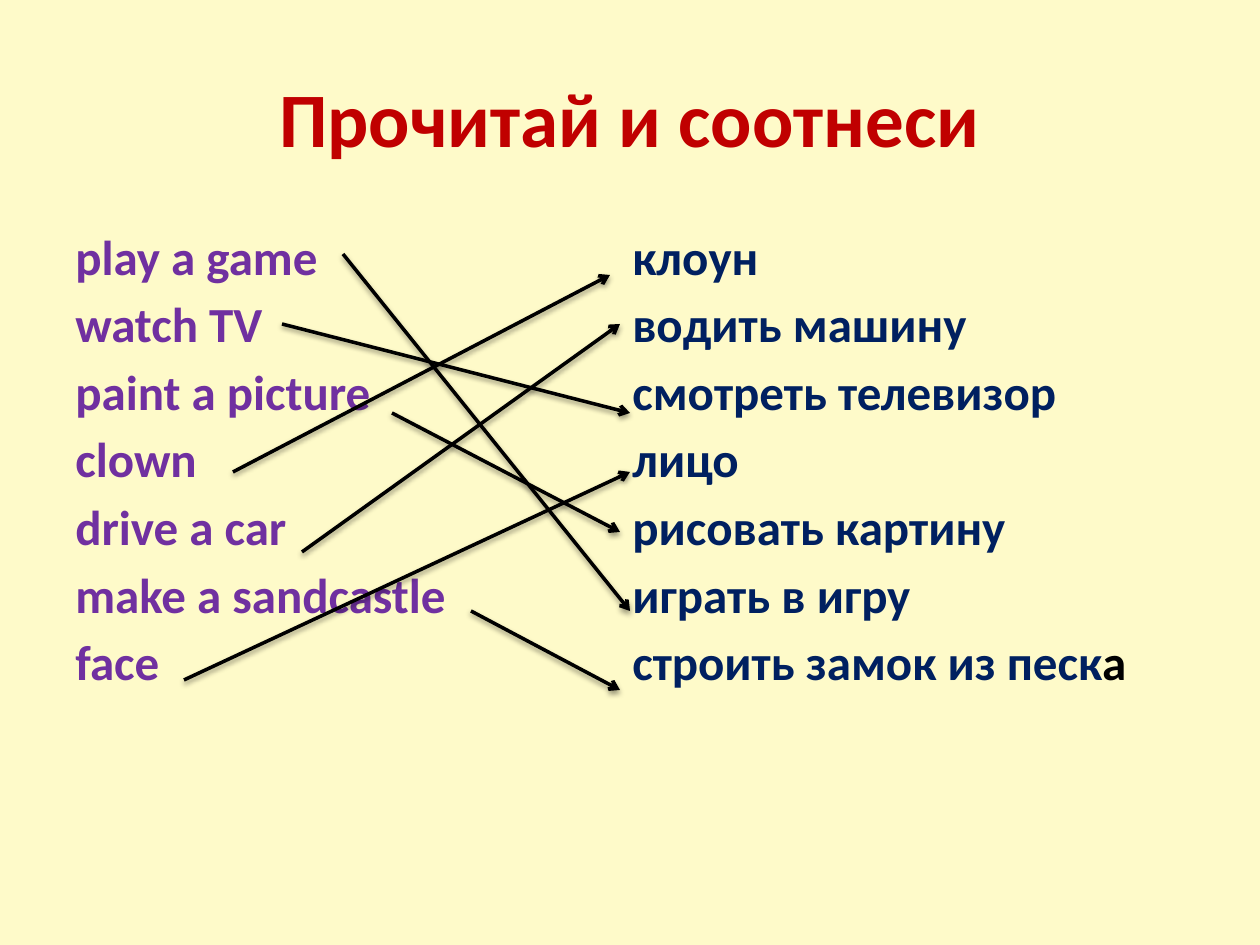
from lxml import etree
from pptx import Presentation
from pptx import util as u
from pptx.dml.color import RGBColor
from pptx.enum import shapes, text
from pptx.oxml import parse_xml
from pptx.oxml.ns import nsdecls, qn

SCALE = 914400 / 126  # EMU per px

SHADOW = f"""<a:effectLst {nsdecls('a')}>
  <a:outerShdw blurRad="39370" dist="20320" dir="5400000" rotWithShape="0">
    <a:srgbClr val="000000"><a:alpha val="38000"/></a:srgbClr>
  </a:outerShdw>
</a:effectLst>"""


def px(length):
    return u.Emu(round(length * SCALE))


def color(hex_string):
    return RGBColor.from_string(hex_string)


class MatchingSlide:
    font = "Calibri"
    background = "FEFAC9"
    black = "000000"

    def __init__(self, presentation):
        self.slide = presentation.slides.add_slide(presentation.slide_layouts[6])
        fill = self.slide.background.fill
        fill.solid()
        fill.fore_color.rgb = color(self.background)

    def format_run(self, run, size, hex_string):
        run.font.name = self.font
        run.font.size = u.Pt(size)
        run.font.bold = True
        run.font.color.rgb = color(hex_string)

    def text_box(self, left, top, width, height, lines, size, hex_string):
        shape = self.slide.shapes.add_textbox(px(left), px(top), px(width), px(height))
        frame = shape.text_frame
        frame.word_wrap = True
        frame.text = "\n".join(lines)
        for paragraph in frame.paragraphs:
            for run in paragraph.runs:
                self.format_run(run, size, hex_string)
        return frame

    def title(self, left, top, width, height, line):
        frame = self.text_box(left, top, width, height, [line], 44, "C00000")
        frame.vertical_anchor = text.MSO_ANCHOR.MIDDLE
        frame.paragraphs[0].alignment = text.PP_ALIGN.CENTER

    def word_column(self, left, width, words, hex_string):
        frame = self.text_box(left, 220, width, 624, words, 28, hex_string)
        for paragraph in frame.paragraphs:
            paragraph.space_before = u.Pt(5)
            properties = paragraph._p.get_or_add_pPr()
            properties.set("marL", str(px(48)))
            properties.set("indent", str(-px(48)))
        return frame

    def arrow(self, start, end):
        connector = self.slide.shapes.add_connector(
            shapes.MSO_CONNECTOR.STRAIGHT, *map(px, start + end))
        connector.line.width = u.Pt(2)
        connector.line.color.rgb = color(self.black)
        line = connector.line._get_or_add_ln()
        etree.SubElement(line, qn("a:tailEnd"), type="arrow")
        connector._element.spPr.append(parse_xml(SHADOW))


def main():
    presentation = Presentation()
    presentation.slide_width, presentation.slide_height = px(1260), px(945)
    slide = MatchingSlide(presentation)

    # Title
    slide.title(63, 38, 1134, 157, "Прочитай и соотнеси")

    # Word columns
    slide.word_column(63, 557, [
        "play a game", "watch TV", "paint a picture", "clown",
        "drive a car", "make a sandcastle", "face"], "7030A0")
    russian = slide.word_column(620, 577, [
        "клоун", "водить машину", "смотреть телевизор", "лицо",
        "рисовать картину", "играть в игру", "строить замок из песк"], "002060")

    # The last letter is black
    last_letter = russian.paragraphs[-1].add_run()
    last_letter.text = "а"
    slide.format_run(last_letter, 28, slide.black)

    # Arrows from each English phrase to its translation
    for start, end in [
        ((343, 254), (630, 611)),
        ((282, 324), (630, 413)),
        ((392, 413), (620, 532)),
        ((233, 472), (610, 275)),
        ((302, 552), (620, 324)),
        ((471, 611), (620, 690)),
        ((184, 680), (630, 472)),
    ]:
        slide.arrow(start, end)

    presentation.save("out.pptx")


if __name__ == "__main__":
    main()
